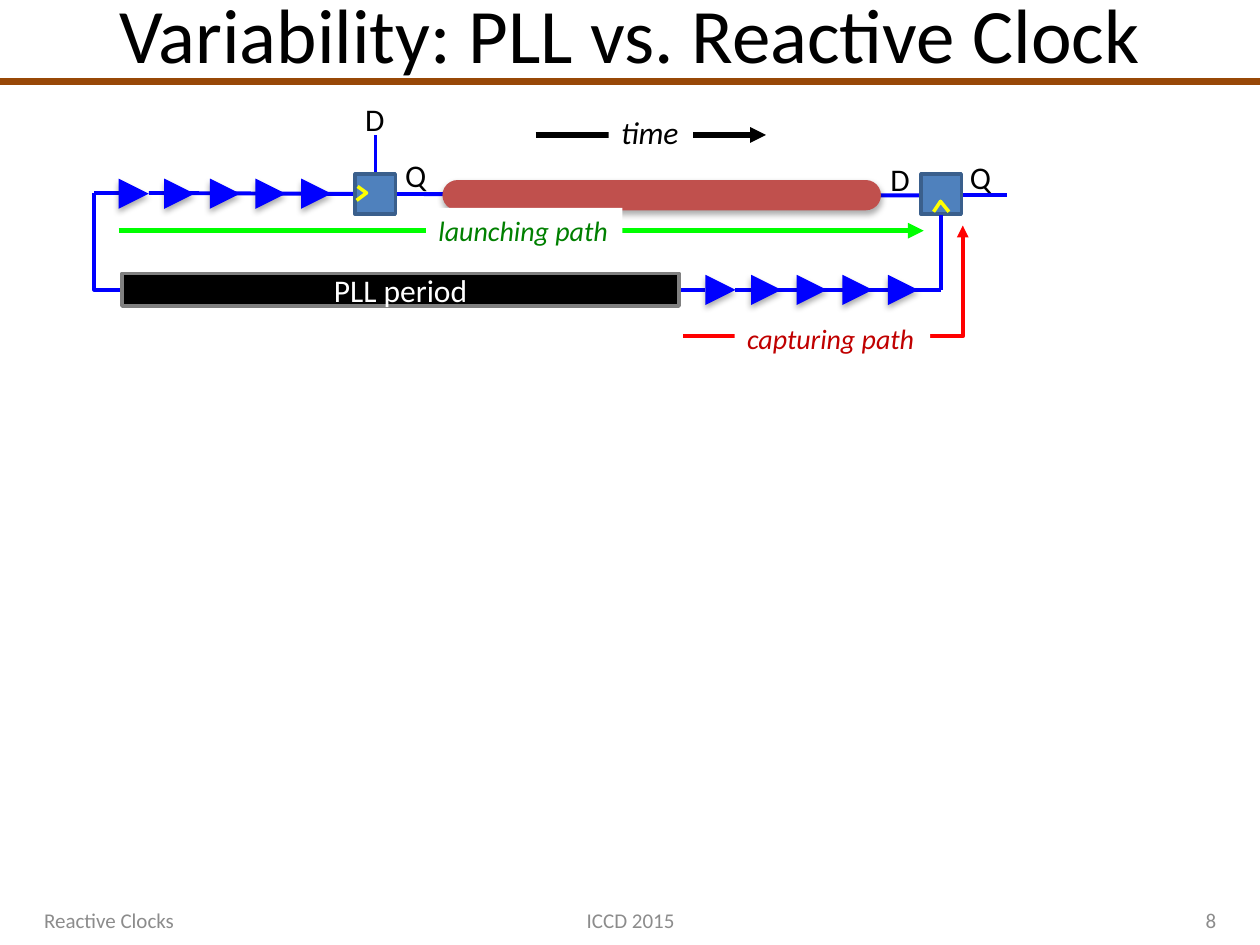
from lxml import etree
from pptx import Presentation
from pptx.dml.color import RGBColor
from pptx.enum.shapes import MSO_CONNECTOR, MSO_SHAPE
from pptx.enum.text import MSO_ANCHOR, PP_ALIGN
from pptx.oxml.ns import qn
from pptx.util import Cm, Pt

STRAIGHT, ELBOW = MSO_CONNECTOR.STRAIGHT, MSO_CONNECTOR.ELBOW
RECT, ROUNDED, TRIANGLE = MSO_SHAPE.RECTANGLE, MSO_SHAPE.ROUNDED_RECTANGLE, MSO_SHAPE.ISOSCELES_TRIANGLE
LEFT, CENTER, RIGHT = PP_ALIGN.LEFT, PP_ALIGN.CENTER, PP_ALIGN.RIGHT
TOP, MIDDLE = MSO_ANCHOR.TOP, MSO_ANCHOR.MIDDLE

COLORS = {
    "rule": "984807", "ink": "000000", "paper": "FFFFFF", "footer": "8C8C8C",
    "wire": "0000FF", "flop": "4F81BD", "flop_edge": "3A5F8C", "clock": "FFFF00",
    "logic": "C0504D", "pll_edge": "808080", "launch": "00FF00",
    "launch_text": "008000", "capture": "FF0000", "capture_text": "C00000",
}
FORMATS = {
    "title": {"size": Pt(44)},
    "footer": {"size": Pt(12)},
    "pin": {"size": Pt(18)},
    "time": {"size": Pt(18), "italic": True},
    "path": {"size": Pt(16), "italic": True},
}
BUFFER_SIZE, BUFFER_PITCH, BUFFER_COUNT = 0.61, 0.92, 5


def color(name):
    """Return the named colour."""
    return RGBColor.from_string(COLORS[name])


def write(frame, words, style, ink, align=LEFT, anchor=TOP, wrap=True):
    """Put one formatted line of text into a frame."""
    frame.word_wrap = wrap
    frame.vertical_anchor = anchor
    line = frame.paragraphs[0]
    line.alignment = align
    run = line.add_run()
    run.text = words
    run.font.color.rgb = color(ink)
    for attribute, value in {"name": "Calibri", **FORMATS[style]}.items():
        setattr(run.font, attribute, value)


def add_text(slide, box, words, style, ink, **layout):
    """Add a text box and return it."""
    label = slide.shapes.add_textbox(*map(Cm, box))
    write(label.text_frame, words, style, ink, **layout)
    return label


def add_path_label(slide, box, words, style, ink):
    """Add a label whose white ground interrupts the arrow behind it."""
    label = add_text(slide, box, words, style, ink, wrap=False)
    label.fill.solid()
    label.fill.fore_color.rgb = color("paper")


def add_line(slide, start, end, ink="wire", width=2.25, arrow=False, bent=False):
    """Add a straight or right-angled connector."""
    line = slide.shapes.add_connector(ELBOW if bent else STRAIGHT, *map(Cm, start + end))
    line.line.color.rgb = color(ink)
    line.line.width = Pt(width)
    properties = line._element.spPr
    if bent:
        properties.find(qn("a:prstGeom")).set("prst", "bentConnector2")
    if arrow:
        etree.SubElement(line.line._get_or_add_ln(), qn("a:tailEnd"), type="triangle")
    etree.SubElement(properties, qn("a:effectLst"))


def add_block(slide, kind, box, fill, edge=None):
    """Add a filled shape without shadow and return it."""
    block = slide.shapes.add_shape(kind, *map(Cm, box))
    block.shadow.inherit = False
    block.fill.solid()
    block.fill.fore_color.rgb = color(fill)
    if edge:
        block.line.color.rgb = color(edge)
        block.line.width = Pt(2)
    else:
        block.line.fill.background()
    return block


def cast_shadow(block):
    """Give a shape a soft shadow straight below it."""
    effects = block._element.spPr.find(qn("a:effectLst"))
    shadow = etree.SubElement(effects, qn("a:outerShdw"), blurRad=str(Pt(3.5)),
                              dist=str(Pt(2.2)), dir="5400000", rotWithShape="0")
    tone = etree.SubElement(shadow, qn("a:srgbClr"), val=COLORS["ink"])
    etree.SubElement(tone, qn("a:alpha"), val="32000")


def add_buffers(slide, left, top):
    """Add a row of clock buffers pointing right."""
    for index in range(BUFFER_COUNT):
        box = (left + index * BUFFER_PITCH, top, BUFFER_SIZE, BUFFER_SIZE)
        buffer = add_block(slide, TRIANGLE, box, "wire")
        buffer.rotation = 90
        cast_shadow(buffer)


def add_clock_mark(slide, points):
    """Add the open chevron that marks a clock input."""
    first, *rest = [tuple(map(Cm, point)) for point in points]
    builder = slide.shapes.build_freeform(*first)
    builder.add_line_segments(rest, close=False)
    mark = builder.convert_to_shape()
    mark.shadow.inherit = False
    mark.fill.background()
    mark.line.color.rgb = color("clock")
    mark.line.width = Pt(2)


def add_frame(slide):
    """Add the title, its rule and the footer."""
    add_line(slide, (0, 1.65), (25.4, 1.65), "rule", 4)
    add_text(slide, (1.27, -0.28, 22.86, 1.9), "Variability: PLL vs. Reactive Clock",
             "title", "ink", align=CENTER, anchor=MIDDLE)
    for left, width, words, align in (
        (0.64, 5.92, "Reactive Clocks", LEFT),
        (8.69, 8.05, "ICCD 2015", CENTER),
        (18.85, 5.92, "8", RIGHT),
    ):
        add_text(slide, (left, 18.03, width, 1.02), words, "footer", "footer",
                 align=align, anchor=MIDDLE)


def add_clock_source(slide):
    """Add the PLL period and the capturing clock tree."""
    add_line(slide, (14.81, 5.84), (18.97, 5.84))
    add_line(slide, (14.22, 5.84), (13.72, 5.84))
    add_buffers(slide, 14.22, 5.54)
    add_line(slide, (2.46, 5.84), (1.9, 3.89), bent=True)
    period = add_block(slide, RECT, (2.46, 5.51, 11.23, 0.66), "ink", "pll_edge")
    write(period.text_frame, "PLL period", "pin", "paper", align=CENTER, anchor=MIDDLE)


def add_data_path(slide):
    """Add the launching clock tree, flip-flops and logic."""
    for start, end in (
        ((3.0, 3.89), (7.16, 3.91)), ((2.39, 3.89), (1.9, 3.89)),
        ((18.57, 3.94), (7.98, 3.91)), ((7.57, 3.51), (7.57, 2.72)),
        ((19.38, 3.94), (20.29, 3.94)),
    ):
        add_line(slide, start, end)
    add_buffers(slide, 2.39, 3.6)
    for left in (7.16, 18.57):
        add_block(slide, RECT, (left, 3.51, 0.81, 0.81), "flop", "flop_edge")
    logic = add_block(slide, ROUNDED, (8.92, 3.63, 8.84, 0.61), "logic")
    logic.adjustments[0] = 0.5
    cast_shadow(logic)
    add_line(slide, (18.97, 4.34), (18.97, 5.84))
    for left, top, pin in ((7.11, 1.9, "D"), (7.92, 3.02, "Q"), (17.7, 3.1, "D"), (19.3, 3.07, "Q")):
        add_text(slide, (left, top, 0.93, 1.02), pin, "pin", "ink", wrap=False)
    add_clock_mark(slide, ((7.21, 3.76), (7.39, 3.89), (7.19, 4.04)))
    add_clock_mark(slide, ((18.82, 4.27), (18.96, 4.06), (19.13, 4.27)))


def add_path_arrows(slide):
    """Add the time, launching and capturing arrows with their labels."""
    add_line(slide, (2.39, 4.65), (18.62, 4.65), "launch", 3, arrow=True)
    add_path_label(slide, (8.59, 4.19, 3.96, 0.94), "launching path", "path", "launch_text")
    add_line(slide, (10.8, 2.72), (15.44, 2.72), "ink", 3, arrow=True)
    add_path_label(slide, (12.27, 2.16, 1.7, 1.02), "time", "time", "ink")
    add_line(slide, (13.77, 6.78), (19.41, 4.55), "capture", arrow=True, bent=True)
    add_path_label(slide, (14.81, 6.35, 3.94, 0.94), "capturing path", "path", "capture_text")


def main():
    """Build the slide and save it."""
    deck = Presentation()
    deck.slide_width, deck.slide_height = Cm(25.4), Cm(19.05)
    slide = deck.slides.add_slide(deck.slide_layouts[6])
    add_frame(slide)
    add_clock_source(slide)
    add_data_path(slide)
    add_path_arrows(slide)
    deck.save("out.pptx")


if __name__ == "__main__":
    main()
